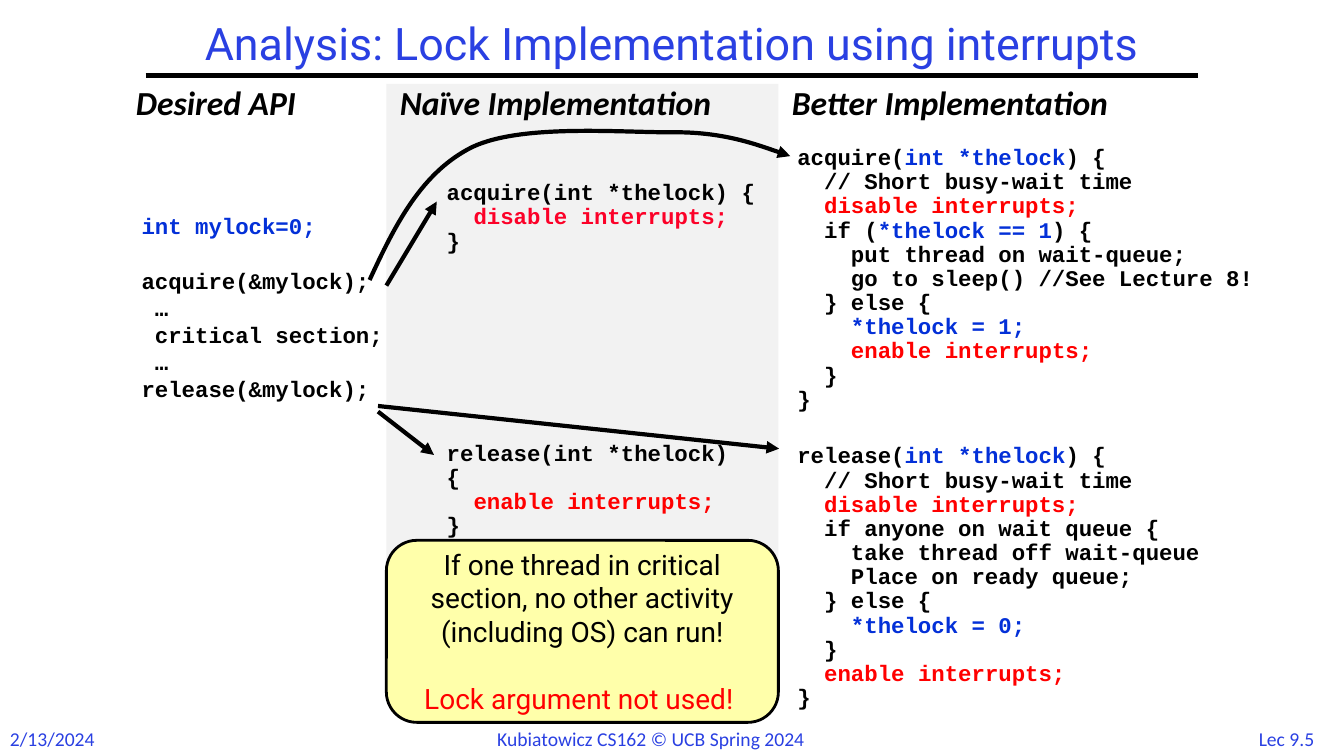
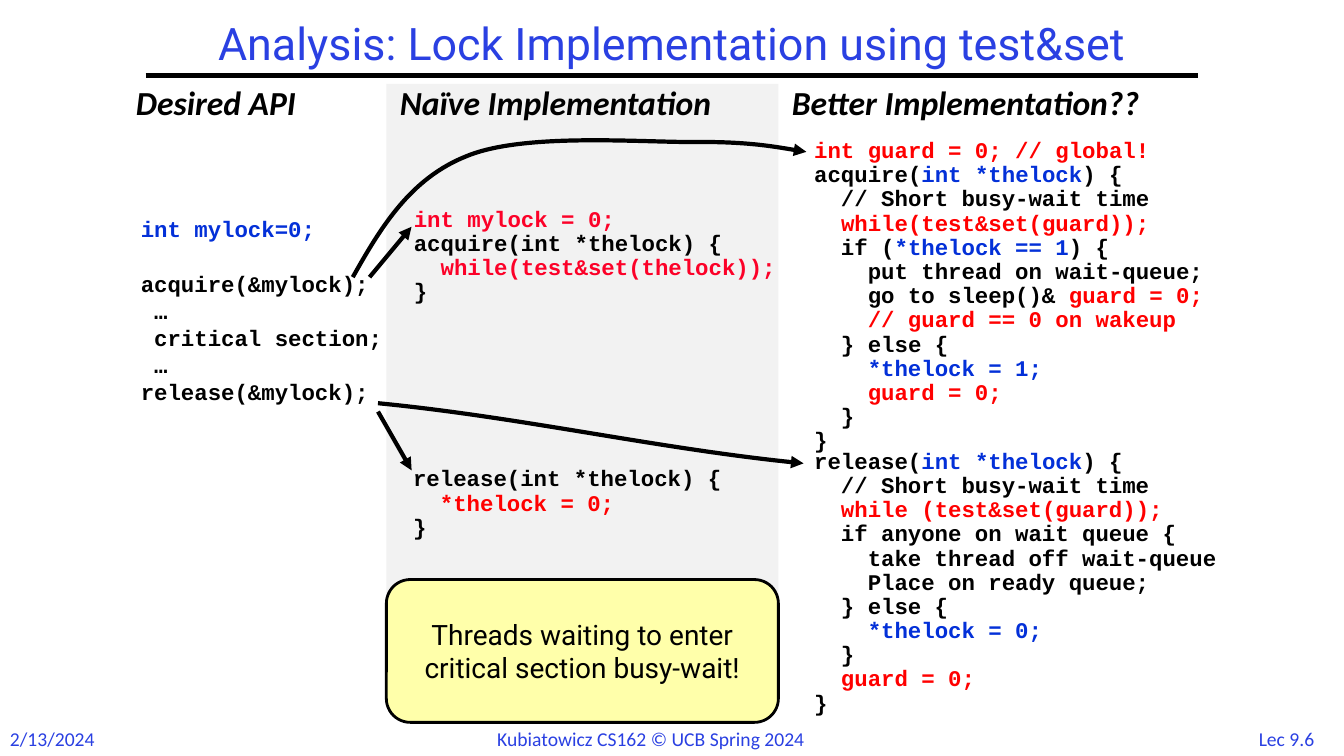
from pptx import Presentation
from pptx.dml.color import RGBColor
from pptx.enum.shapes import MSO_CONNECTOR, MSO_SHAPE
from pptx.enum.text import MSO_ANCHOR, MSO_AUTO_SIZE, PP_ALIGN
from pptx.oxml.ns import qn
from pptx.util import Pt
from lxml import etree

LEFT, CENTER = PP_ALIGN.LEFT, PP_ALIGN.CENTER
TOP, MIDDLE = MSO_ANCHOR.TOP, MSO_ANCHOR.MIDDLE
COLORS = {
    "title": "2A40E2", "black": "000000", "blue": "0330D8", "red": "FF0000",
    "crimson": "FC0128", "panel": "F2F2F2", "note": "FFFFAA",
}
HEAD_FONT, CODE_FONT, LABEL_FONT = "Roboto", "Courier New", "Calibri"
TITLE_ONLY = 5
PANEL_LEFT, PANEL_TOP, PANEL_WIDTH, PANEL_HEIGHT = 276, 60, 280, 438
NOTE_BOTTOM = 516

# Code: ~ switches the accent colour on and off, ^ switches blue
API_CODE = ["^int mylock=0;^", "acquire(&mylock);", " …",
            " critical section;", " …", "release(&mylock);"]
API_GAPS = [0, 23.4, 4, 4, 4, 4]


def better_acquire(lock, sleep, unlock):
    return ["acquire(^int *thelock^) {", "  // Short busy-wait time",
            f"  ~{lock}~", "  if (^*thelock == 1^) {",
            "    put thread on wait-queue;", *sleep, "  } else {",
            "    ^*thelock = 1;^", f"    ~{unlock}~", "  }", "}"]


def better_release(lock, unlock):
    return ["release(^int *thelock^) {", "  // Short busy-wait time",
            f"  ~{lock}~", "  if anyone on wait queue {",
            "    take thread off wait-queue", "    Place on ready queue;",
            "  } else {", "    ^*thelock = 0;^", "  }", f"  ~{unlock}~", "}"]


LOCK_PAGES = [
    {
        "title": "Analysis: Lock Implementation using interrupts",
        "number": "Lec 9.5",
        "better": "Better Implementation",
        "note_top": 386,
        "note": ["If one thread in critical section, no other activity "
                 "(including OS) can run!", "~Lock argument not used! ~"],
        "api": (94, 152),
        "code": [
            (312, 126, 246, "crimson",
             ["acquire(int *thelock) {", "  ~disable interrupts;~", "}"]),
            (312, 312, 222, "red",
             ["release(int *thelock) {", "  ~enable interrupts;~", "}"]),
            (562.5, 101, 380, "red", better_acquire(
                "disable interrupts;",
                ["    go to sleep() //See Lecture 8!"],
                "enable interrupts;")),
            (562.5, 314, 313, "red", better_release(
                "disable interrupts;", "enable interrupts;")),
        ],
        "arrows": [
            [(270, 294), (310, 325)],
            [(276, 204), (312, 144)],
            [(270, 290), (556.5, 320.5)],
        ],
        "curves": [
            [(264, 200), (282, 161), (301, 123), (337.5, 105), (373.5, 88),
             (446.5, 95), (483, 94.5), (519, 94.5), (564.5, 111.5),
             (564.5, 111.5)],
        ],
    },
    {
        "title": "Analysis: Lock Implementation using test&set",
        "number": "Lec 9.6",
        "better": "Better Implementation??",
        "note_top": 414,
        "note": ["Threads waiting to enter critical section busy-wait!"],
        "api": (93.5, 154),
        "code": [
            (288.5, 145, 276, "crimson",
             ["~int mylock = 0;~", "acquire(int *thelock) {",
              "  ~while(test&set(thelock));~", "}"]),
            (288, 330.5, 240, "red",
             ["release(int *thelock) {", "  ~*thelock = 0;~", "}"]),
            (574.5, 96, 300, "red",
             ["~int guard = 0; // global!~"] + better_acquire(
                 "while(test&set(guard));",
                 ["    go to sleep()& ~guard = 0;~",
                  "    ~// guard == 0 on wakeup~"],
                 "guard = 0;")),
            (574.5, 318, 313, "red", better_release(
                "while (test&set(guard));", "guard = 0;")),
        ],
        "arrows": [
            [(270, 294), (294, 336)],
            [(264, 198), (294, 162)],
        ],
        "curves": [
            [(270, 288), (372, 298), (471.5, 321), (574, 331)],
            [(252, 198), (272, 162.5), (293, 127.5), (333.5, 111.5),
             (373.5, 95), (454.5, 101.5), (494.5, 101.5), (535, 101),
             (576, 108.5), (576, 108.5)],
        ],
    },
]


def color(name):
    return RGBColor.from_string(COLORS[name])


def colored_parts(line, base, accent):
    """Split a marked line into (text, colour name) parts."""
    for index, piece in enumerate(line.split("~")):
        if index % 2:
            yield piece, accent
            continue
        for inner, text in enumerate(piece.split("^")):
            if text:
                yield text, "blue" if inner % 2 else base


def write(box, lines, font, size, base="black", accent="red", bold=False,
          italic=False, align=LEFT, anchor=TOP, spacing=1.0, gaps=None):
    """Fill a text holder with one paragraph per marked line."""
    frame = box.text_frame
    frame.word_wrap = True
    frame.auto_size = MSO_AUTO_SIZE.NONE
    frame.vertical_anchor = anchor
    for index, line in enumerate(lines):
        para = frame.add_paragraph() if index else frame.paragraphs[0]
        para.alignment = align
        para.line_spacing = spacing
        para.space_before = Pt(gaps[index] if gaps else 0)
        for text, name in colored_parts(line, base, accent):
            span = para.add_run()
            span.text = text
            span.font.name = font
            span.font.size = Pt(size)
            span.font.bold = bold
            span.font.italic = italic
            span.font.color.rgb = color(name)


def add_text(page, left, top, width, height, lines, font, size, **options):
    box = page.shapes.add_textbox(Pt(left), Pt(top), Pt(width), Pt(height))
    write(box, lines, font, size, **options)


def add_code(page, left, top, width, lines, **options):
    add_text(page, left, top, width, 17.3 * len(lines) + 8, lines,
             CODE_FONT, 16, bold=True, **options)


def add_block(page, kind, top, height, fill):
    """Add a plain shape as wide as the middle column."""
    block = page.shapes.add_shape(kind, Pt(PANEL_LEFT), Pt(top),
                                  Pt(PANEL_WIDTH), Pt(height))
    block.shadow.inherit = False
    block.fill.solid()
    block.fill.fore_color.rgb = color(fill)
    block.line.fill.background()
    return block


def add_note(page, top, lines):
    note = add_block(page, MSO_SHAPE.ROUNDED_RECTANGLE, top,
                     NOTE_BOTTOM - top, "note")
    note.adjustments[0] = 0.167
    note.line.color.rgb = color("black")
    note.line.width = Pt(2)
    write(note, lines, HEAD_FONT, 20, align=CENTER, anchor=MIDDLE,
          gaps=[0, 24])


def add_arrow(page, points, curved=False):
    """Draw an arrow; a curved one has three points per Bézier segment."""
    start, *others = [(Pt(x), Pt(y)) for x, y in points]
    builder = page.shapes.build_freeform(*start)
    builder.add_line_segments(others, close=False)
    arrow = builder.convert_to_shape()
    arrow.shadow.inherit = False
    arrow.fill.background()
    arrow.line.color.rgb = color("black")
    arrow.line.width = Pt(3)
    outline = arrow.element.spPr.find(qn("a:ln"))
    etree.SubElement(outline, qn("a:tailEnd"), type="triangle")
    if curved:
        outline_path = next(arrow.element.iter(qn("a:path")))
        segments = outline_path.findall(qn("a:lnTo"))
        for first in range(0, len(segments), 3):
            curve = etree.SubElement(outline_path, qn("a:cubicBezTo"))
            for segment in segments[first:first + 3]:
                curve.append(segment[0])
                outline_path.remove(segment)


def add_frame(page, title, number):
    """Add the title, the rule below it and the footers."""
    box = page.shapes.title
    box.left, box.top, box.width, box.height = Pt(104), Pt(12), Pt(752), Pt(42)
    write(box, [title], HEAD_FONT, 32, base="title", align=CENTER,
          anchor=MIDDLE, spacing=0.9)
    rule = page.shapes.add_connector(MSO_CONNECTOR.STRAIGHT, Pt(104), Pt(54),
                                     Pt(856), Pt(54))
    rule.line.color.rgb = color("black")
    rule.line.width = Pt(3)
    etree.SubElement(rule.element.spPr, qn("a:effectLst"))
    footers = [(0, 77, "2/13/2024", LEFT),
               (348, 265, "Kubiatowicz CS162 © UCB Spring 2024", LEFT),
               (884, 70, number, CENTER)]
    for left, width, text, align in footers:
        add_text(page, left, 515.5, width, 24, [text], LABEL_FONT, 14,
                 base="title", align=align)


def add_lock_page(deck, content):
    page = deck.slides.add_slide(deck.slide_layouts[TITLE_ONLY])
    add_frame(page, content["title"], content["number"])

    # Middle column and its note
    add_block(page, MSO_SHAPE.RECTANGLE, PANEL_TOP, PANEL_HEIGHT, "panel")
    add_note(page, content["note_top"], content["note"])

    # Column headings
    headings = [(90, "Desired API"), (278.5, "Naïve Implementation"),
                (558.5, content["better"])]
    for left, text in headings:
        add_text(page, left, 55, 300, 36, [text], LABEL_FONT, 24,
                 bold=True, italic=True)

    # Code listings
    add_code(page, *content["api"], 206, API_CODE, spacing=0.8, gaps=API_GAPS)
    for left, top, width, accent, lines in content["code"]:
        add_code(page, left, top, width, lines, accent=accent, spacing=0.9)

    # Arrows from the calls to their implementations
    for points in content["arrows"]:
        add_arrow(page, points)
    for points in content["curves"]:
        add_arrow(page, points, curved=True)


def main():
    deck = Presentation()
    deck.slide_width, deck.slide_height = Pt(960), Pt(540)
    for content in LOCK_PAGES:
        add_lock_page(deck, content)
    deck.save("out.pptx")


if __name__ == "__main__":
    main()
